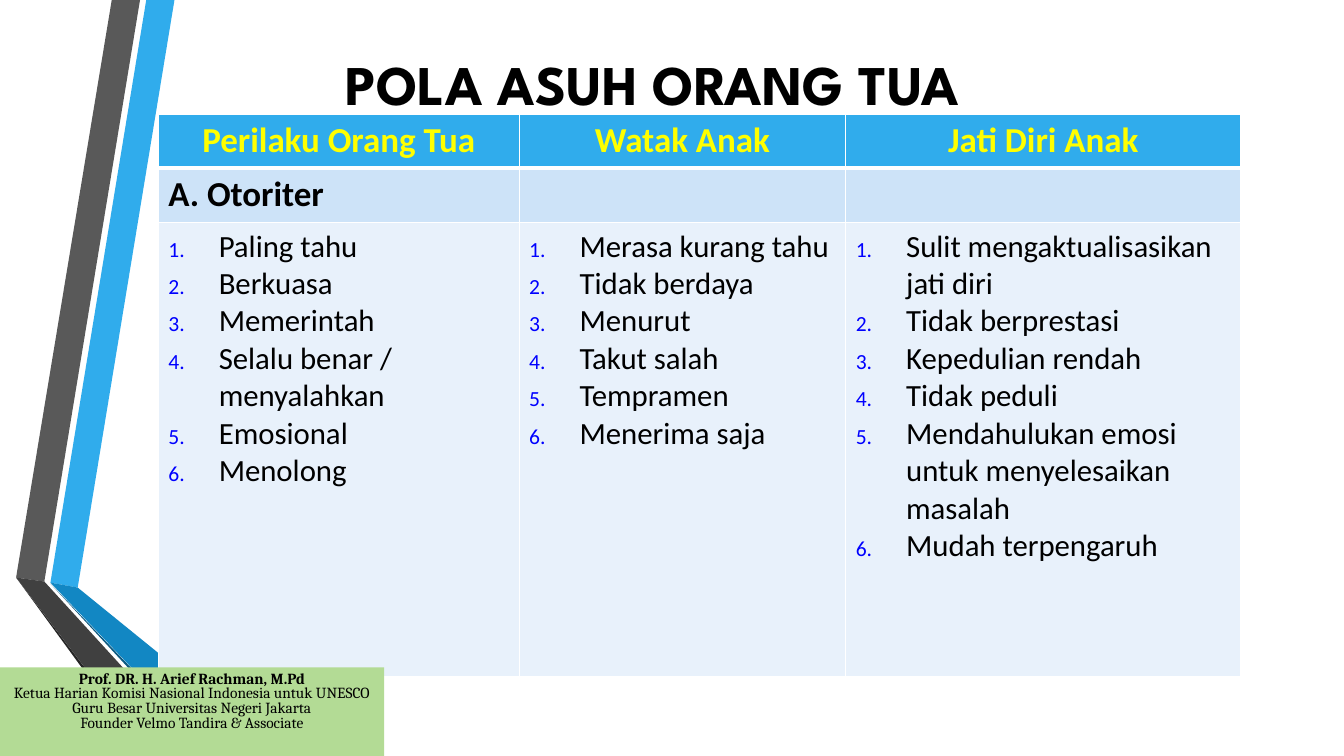
"""Build the slide on parenting styles: ribbons, title, comparison table and speaker card."""
from lxml.etree import SubElement
from pptx import Presentation
from pptx.dml.color import RGBColor
from pptx.enum.shapes import MSO_SHAPE
from pptx.enum.text import MSO_ANCHOR, PP_ALIGN
from pptx.oxml.ns import qn
from pptx.util import Inches, Pt

SLIDE_WIDTH, SLIDE_HEIGHT = Inches(13.33), Inches(7.5)
BLACK = RGBColor(0x00, 0x00, 0x00)
WHITE = RGBColor(0xFF, 0xFF, 0xFF)
YELLOW = RGBColor(0xFF, 0xFF, 0x00)
NUMBER_BLUE = RGBColor(0x00, 0x00, 0xFF)
SKY = RGBColor(0x30, 0xAC, 0xEC)
OCEAN = RGBColor(0x12, 0x87, 0xC3)
NAVY = RGBColor(0x0C, 0x5A, 0x82)
GREY = RGBColor(0x59, 0x59, 0x59)
CHARCOAL = RGBColor(0x40, 0x40, 0x40)
SOOT = RGBColor(0x26, 0x26, 0x26)
PALE_BLUE = RGBColor(0xCD, 0xE3, 0xF8)
ICE_BLUE = RGBColor(0xE8, 0xF1, 0xFB)
LEAF = RGBColor(0xB3, 0xDB, 0x95)

RIBBONS = [
    (SKY, [(3.75, 77.07), (5.78, 77.73), (12.98, 0), (10.88, 0)]),
    (GREY, [(10.42, 0), (8.32, 0), (1.2, 76.4), (3.3, 76.93)]),
    (SOOT, [(1.2, 76.4), (10.88, 100), (11.33, 100)]),
    (NAVY, [(3.75, 77.2), (15.6, 100), (16.05, 100)]),
    (OCEAN, [(3.75, 77.07), (16.05, 100), (21.22, 100), (5.78, 77.73)]),
    (CHARCOAL, [(15.15, 100), (3.3, 76.93), (1.2, 76.4), (11.33, 100)]),
]
COLUMN_SHARES = [26.85, 24.3, 29.4]
ROW_SHARES = [7.2, 7.2, 60]
HEADINGS = ["Perilaku Orang Tua", "Watak Anak", "Jati Diri Anak"]
STYLE_NAMES = ["A. Otoriter", "", ""]
TRAITS = [
    ["Paling tahu", "Berkuasa", "Memerintah", "Selalu benar / menyalahkan",
     "Emosional", "Menolong"],
    ["Merasa kurang tahu", "Tidak berdaya", "Menurut", "Takut salah",
     "Tempramen", "Menerima saja"],
    ["Sulit mengaktualisasikan jati diri", "Tidak berprestasi", "Kepedulian rendah",
     "Tidak peduli", "Mendahulukan emosi untuk menyelesaikan masalah",
     "Mudah terpengaruh"],
]
SPEAKER = [
    "Prof. DR. H. Arief Rachman, M.Pd",
    "Ketua Harian Komisi Nasional Indonesia untuk UNESCO",
    "Guru Besar Universitas Negeri Jakarta",
    "Founder Velmo Tandira & Associate",
]


def across(share):
    """Turn a percentage of the slide width into a length."""
    return round(SLIDE_WIDTH * share / 100)


def down(share):
    """Turn a percentage of the slide height into a length."""
    return round(SLIDE_HEIGHT * share / 100)


def write(frame, lines, font_name, size, color, bold=False, align=PP_ALIGN.LEFT):
    """Fill a text frame with one formatted paragraph per line."""
    frame.text = "\n".join(lines)
    for paragraph in frame.paragraphs:
        paragraph.alignment = align
        for run in paragraph.runs:
            run.font.name = font_name
            run.font.size = Pt(size)
            run.font.bold = bold
            run.font.color.rgb = color


def number(paragraph):
    """Give a paragraph a hanging, automatically counted blue number."""
    properties = paragraph._p.get_or_add_pPr()
    properties.set("marL", str(Inches(0.5)))
    properties.set("indent", str(-Inches(0.5)))
    number_color = SubElement(properties, qn("a:buClr"))
    SubElement(number_color, qn("a:srgbClr"), val=str(NUMBER_BLUE))
    SubElement(properties, qn("a:buSzPct"), val="70000")
    SubElement(properties, qn("a:buFont"), typeface="+mj-lt")
    SubElement(properties, qn("a:buAutoNum"), type="arabicPeriod")


def paint_cell(cell, fill, bottom_width=1):
    """Fill a table cell and draw its white borders."""
    properties = cell._tc.get_or_add_tcPr()
    for side, width in [("L", 1), ("R", 1), ("T", 1), ("B", bottom_width)]:
        border = SubElement(properties, qn(f"a:ln{side}"), w=str(Pt(width)))
        paint = SubElement(border, qn("a:solidFill"))
        SubElement(paint, qn("a:srgbClr"), val=str(WHITE))
    cell.fill.solid()
    cell.fill.fore_color.rgb = fill


def paint_shape(shape, fill):
    """Give a shape a plain fill without outline or shadow."""
    shape.shadow.inherit = False
    shape.fill.solid()
    shape.fill.fore_color.rgb = fill
    shape.line.fill.background()


def add_ribbon(slide, fill, corners):
    """Draw one closed ribbon through corners given as shares of the slide."""
    points = [(across(x), down(y)) for x, y in corners]
    outline = slide.shapes.build_freeform(*points[0])
    outline.add_line_segments(points[1:], close=True)
    paint_shape(outline.convert_to_shape(), fill)


def add_title(slide, wording):
    """Place and format the slide title."""
    title = slide.shapes.title
    title.left, title.top = across(12.6), down(5.6)
    title.width, title.height = across(71.85), down(10.67)
    title.text_frame.vertical_anchor = MSO_ANCHOR.MIDDLE
    write(title.text_frame, [wording], "League Spartan", 40, BLACK, True, PP_ALIGN.CENTER)


def add_comparison(slide):
    """Add the table of parent behaviour, child character and identity."""
    comparison = slide.shapes.add_table(
        len(ROW_SHARES), len(COLUMN_SHARES), across(11.78), down(15.07),
        across(sum(COLUMN_SHARES)), down(sum(ROW_SHARES))).table
    for row, share in zip(comparison.rows, ROW_SHARES):
        row.height = down(share)
    for index, share in enumerate(COLUMN_SHARES):
        comparison.columns[index].width = across(share)
        heading, style_name, traits = (comparison.cell(row, index) for row in range(3))
        write(heading.text_frame, [HEADINGS[index]], "Calibri", 25, YELLOW, True,
              PP_ALIGN.CENTER)
        write(style_name.text_frame, [STYLE_NAMES[index]], "Calibri", 25, BLACK, True)
        write(traits.text_frame, TRAITS[index], "Calibri", 22, BLACK)
        for trait in traits.text_frame.paragraphs:
            number(trait)
        paint_cell(heading, SKY, bottom_width=3)
        paint_cell(style_name, PALE_BLUE)
        paint_cell(traits, ICE_BLUE)


def add_speaker_card(slide):
    """Add the green card that introduces the speaker."""
    card = slide.shapes.add_shape(
        MSO_SHAPE.RECTANGLE, 0, down(88.27), across(28.58), down(11.73))
    paint_shape(card, LEAF)
    frame = card.text_frame
    frame.word_wrap = True
    frame.vertical_anchor = MSO_ANCHOR.TOP
    write(frame, SPEAKER, "Cambria", 11, BLACK, align=PP_ALIGN.CENTER)
    for paragraph in frame.paragraphs:
        paragraph.line_spacing = 0.8
    frame.paragraphs[0].runs[0].font.bold = True


def main():
    """Assemble and save the slide."""
    presentation = Presentation()
    presentation.slide_width, presentation.slide_height = SLIDE_WIDTH, SLIDE_HEIGHT
    slide = presentation.slides.add_slide(presentation.slide_layouts[5])
    for fill, corners in RIBBONS:
        add_ribbon(slide, fill, corners)
    add_title(slide, "POLA ASUH ORANG TUA")
    add_comparison(slide)
    add_speaker_card(slide)
    presentation.save("out.pptx")


if __name__ == "__main__":
    main()
